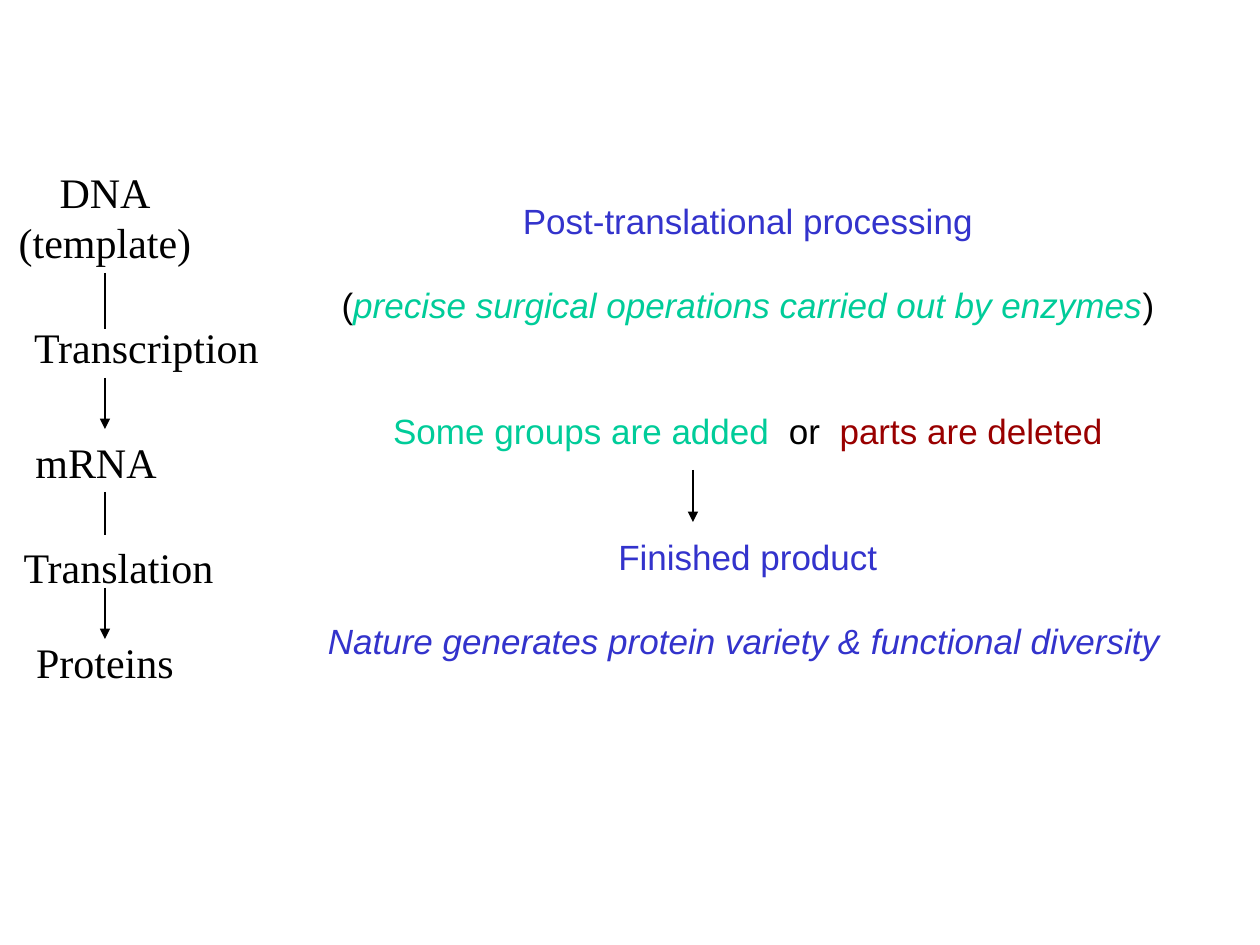
from dataclasses import dataclass

from lxml.etree import SubElement
from pptx import Presentation
from pptx.dml.color import RGBColor
from pptx.enum.shapes import MSO_CONNECTOR as Connector
from pptx.enum.text import MSO_AUTO_SIZE as AutoSize, PP_ALIGN as Align
from pptx.oxml.ns import qn
from pptx.util import Emu, Pt

EMU_PER_PX = 914400 // 126
LEADING = 1.2
SIDE_MARGIN = 6
BLACK, BLUE, GREEN, RED = "000000", "3333CC", "00CC99", "990000"
BOTTOM = 2


@dataclass
class Run:
    text: str
    color: str = BLACK
    italic: bool = False
    font: str = "Arial"
    size: int = 20


@dataclass
class Line:
    runs: list[Run]
    lines_before: int = 0


@dataclass
class Box:
    left: int
    top: int
    width: int
    height: int
    lines: list[Line]
    wrap: bool = False


@dataclass
class Link:
    x: int
    top: int
    bottom: int
    arrow: bool = False


def px(length: int) -> Emu:
    return Emu(length * EMU_PER_PX)


def rgb(color: str) -> RGBColor:
    return RGBColor.from_string(color)


def step(*names: str) -> list[Line]:
    return [Line([Run(name, font="Times New Roman", size=24)]) for name in names]


def draw_box(slide, box: Box):
    shape = slide.shapes.add_textbox(px(box.left), px(box.top), px(box.width), px(box.height))
    frame = shape.text_frame
    frame.word_wrap = box.wrap
    frame.auto_size = AutoSize.SHAPE_TO_FIT_TEXT
    frame.margin_left = frame.margin_right = px(SIDE_MARGIN)
    for index, line in enumerate(box.lines):
        paragraph = frame.add_paragraph() if index else frame.paragraphs[0]
        pitch = line.runs[0].size * LEADING
        paragraph.alignment = Align.CENTER
        paragraph.line_spacing = Pt(pitch)
        paragraph.space_before = Pt(pitch * line.lines_before)
        for part in line.runs:
            run = paragraph.add_run()
            run.text = part.text
            run.font.name = part.font
            run.font.size = Pt(part.size)
            run.font.italic = part.italic
            run.font.color.rgb = rgb(part.color)
    return shape


def draw_link(slide, link: Link):
    connector = slide.shapes.add_connector(
        Connector.STRAIGHT, px(link.x), px(link.top), px(link.x), px(link.bottom))
    connector.line.color.rgb = rgb(BLACK)
    connector.line.width = Pt(0.75)
    if link.arrow:
        outline = connector._element.spPr.find(qn("a:ln"))
        SubElement(outline, qn("a:tailEnd"), type="triangle")
    SubElement(connector._element.spPr, qn("a:effectLst"))
    return connector


PROCESSING = Box(268, 193, 960, 510, [
    Line([Run("Post-translational processing", BLUE)]),
    Line([Run("("),
          Run("precise surgical operations carried out by enzymes", GREEN, italic=True),
          Run(")")], lines_before=1),
    Line([Run("Some groups are added ", GREEN),
          Run(" or  "),
          Run("parts are deleted", RED)], lines_before=2),
    Line([Run("Finished product", BLUE)], lines_before=2),
    Line([Run("Nature generates protein variety & functional diversity", BLUE, italic=True),
          Run(" ", BLUE, font="Montserrat", size=17)], lines_before=1),
], wrap=True)
FINISHING_ARROW = Link(693, 470, 522, arrow=True)

DNA = Box(6, 160, 198, 113, step("DNA", "(template)"))
LATER_STEPS = [
    Box(21, 315, 251, 63, step("Transcription")),
    Box(10, 535, 217, 63, step("Translation")),
    Box(23, 430, 146, 63, step("mRNA")),
    Box(24, 630, 162, 63, step("Proteins")),
]
DNA_LINK = Link(105, 273, 329)
LATER_LINKS = [
    Link(105, 378, 429, arrow=True),
    Link(105, 492, 535),
    Link(105, 588, 639, arrow=True),
]


def main():
    deck = Presentation()
    deck.slide_width, deck.slide_height = px(1260), px(945)
    slide = deck.slides.add_slide(deck.slide_layouts[6])

    draw_box(slide, PROCESSING)
    draw_link(slide, FINISHING_ARROW)
    dna = draw_box(slide, DNA)
    for box in LATER_STEPS:
        draw_box(slide, box)
    draw_link(slide, DNA_LINK).begin_connect(dna, BOTTOM)
    for link in LATER_LINKS:
        draw_link(slide, link)

    deck.save("out.pptx")


if __name__ == "__main__":
    main()
